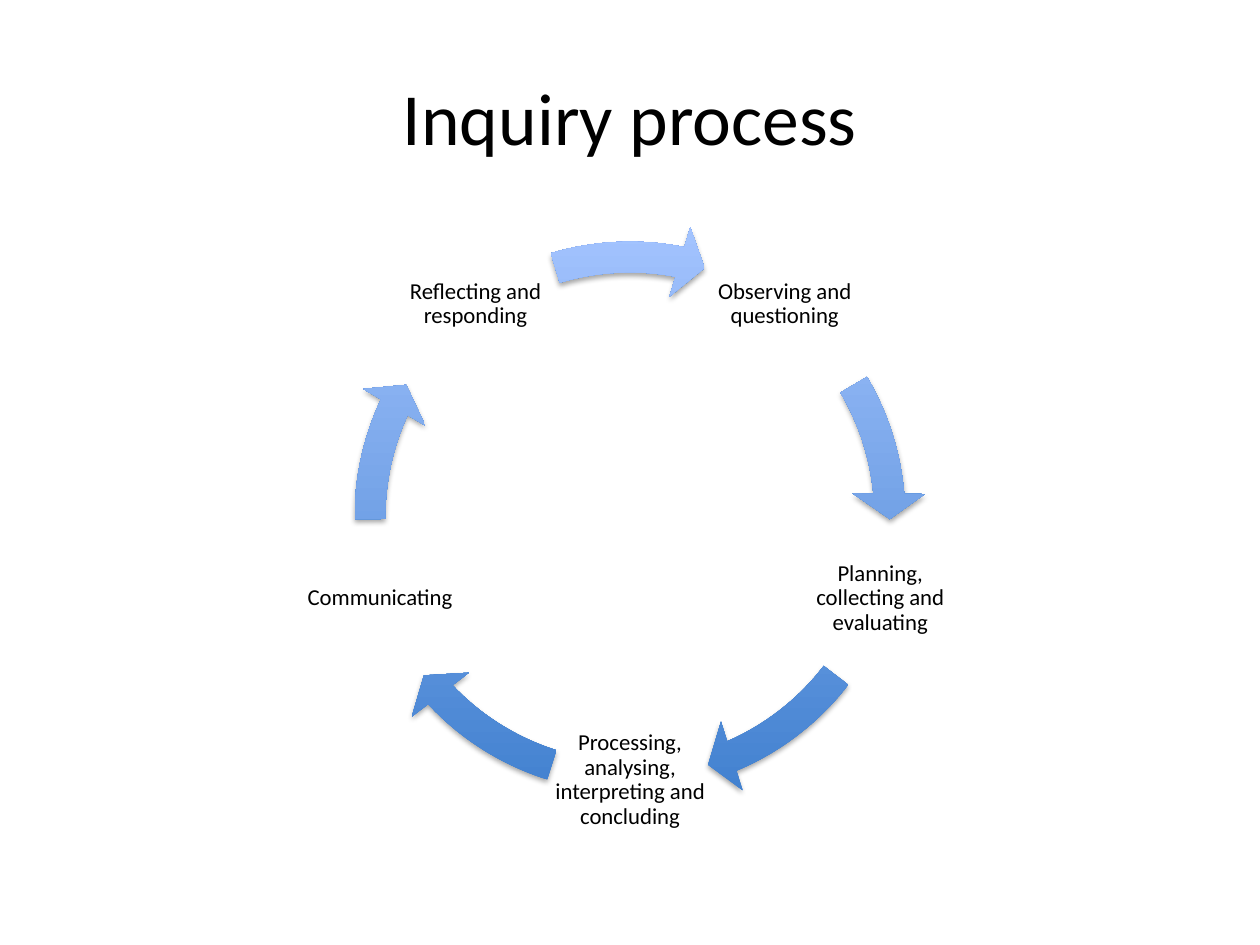
from math import cos, radians, sin

from lxml.etree import SubElement
from pptx import Presentation
from pptx.dml.color import RGBColor
from pptx.enum.shapes import MSO_SHAPE as SHAPE
from pptx.enum.text import MSO_ANCHOR as ANCHOR, PP_ALIGN as ALIGN
from pptx.oxml.ns import qn
from pptx.util import Emu, Pt

STEPS = [
    ("Observing and questioning", 329.44, 354.88),
    ("Planning, collecting and evaluating", 37.56, 66.91),
    ("Processing, analysing, interpreting and concluding", 107.49, 136.84),
    ("Communicating", 179.52, 204.96),
    ("Reflecting and responding", 253.31, 281.09),
]
CENTER_X, CENTER_Y = 630, 517
RADIUS = 263
LABEL = 158
RING = 592


def px(n):
    """Turn pixels into EMU."""
    return Emu(round(n * 914400 / 126))


def color(value):
    """Turn a hex string into a colour."""
    return RGBColor.from_string(value)


class CycleSlide:
    """Style and drawing methods for a cycle slide."""

    font = "Calibri"
    ink = "000000"
    gradient = ("3F7FCE", "A4C4FF")

    def __init__(self, prs):
        """Add a blank slide."""
        self.s = prs.slides.add_slide(prs.slide_layouts[6])

    def text(self, text, x, y, w, h, size, inset=None, spacing=None):
        """Add a centred text box."""
        sp = self.s.shapes.add_textbox(px(x), px(y), px(w), px(h))
        tf = sp.text_frame
        tf.word_wrap = True
        tf.vertical_anchor = ANCHOR.MIDDLE
        if inset is not None:
            tf.margin_left = tf.margin_right = px(inset)
            tf.margin_top = tf.margin_bottom = px(inset)
        tf.text = text
        p = tf.paragraphs[0]
        p.alignment = ALIGN.CENTER
        p.line_spacing = spacing
        font = p.runs[0].font
        font.name = self.font
        font.size = Pt(size)
        font.color.rgb = color(self.ink)

    def arrow(self, x, y, size, start, end):
        """Add an arc arrow between two angles in degrees."""
        sp = self.s.shapes.add_shape(
            SHAPE.CIRCULAR_ARROW, px(x), px(y), px(size), px(size))
        values = (0.052, 3.36, end * 0.6, start * 0.6, 0.061)
        for i, value in enumerate(values):
            sp.adjustments[i] = value
        sp.fill.gradient()
        sp.fill.gradient_angle = 90
        for stop, value in zip(sp.fill.gradient_stops, self.gradient):
            stop.color.rgb = color(value)
        for stop, position in zip(sp.fill.gradient_stops, (0, 1)):
            stop.position = position
        sp.line.fill.background()
        self.shadow(sp)

    def shadow(self, sp):
        """Give a shape a soft shadow below it."""
        sp.shadow.inherit = False
        effects = sp._element.spPr.find(qn("a:effectLst"))
        outer = SubElement(
            effects, qn("a:outerShdw"), blurRad=str(Pt(3.1)),
            dist=str(Pt(1.8)), dir="5400000", rotWithShape="0")
        clr = SubElement(outer, qn("a:srgbClr"), val=self.ink)
        SubElement(clr, qn("a:alpha"), val="35000")


def main():
    """Build the inquiry cycle."""
    prs = Presentation()
    prs.slide_width, prs.slide_height = px(1260), px(945)
    slide = CycleSlide(prs)
    slide.text("Inquiry process", 63, 38, 1134, 157, 42)
    for i, (label, start, end) in enumerate(STEPS):
        angle = radians(72 * i - 54)
        x = CENTER_X + RADIUS * cos(angle) - LABEL / 2
        y = CENTER_Y + RADIUS * sin(angle) - LABEL / 2
        slide.text(label, x, y, LABEL, LABEL, 13, inset=2, spacing=0.9)
        slide.arrow(CENTER_X - RING / 2, CENTER_Y - RING / 2, RING, start, end)
    prs.save("out.pptx")


if __name__ == "__main__":
    main()
